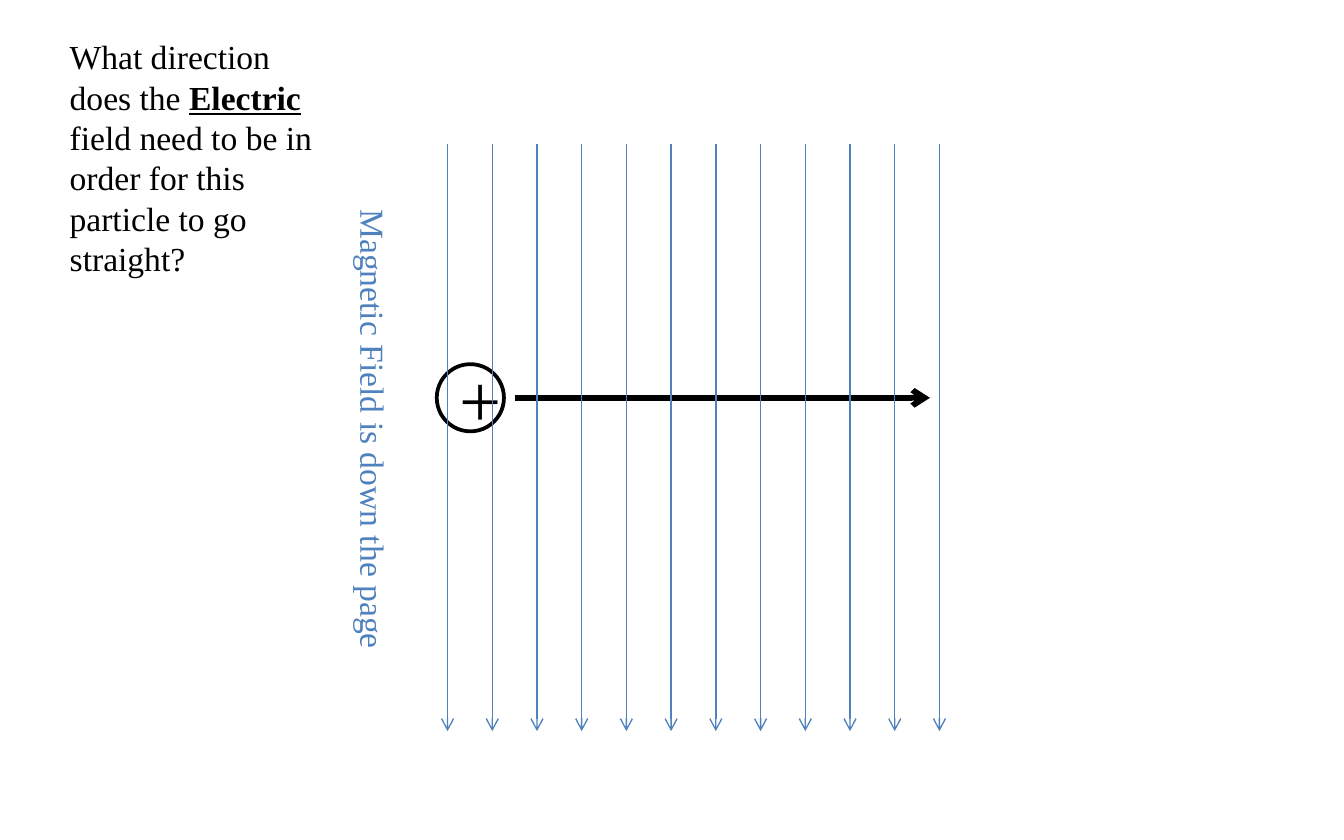
from lxml import etree
from pptx import Presentation
from pptx.dml.color import RGBColor
from pptx.enum.shapes import MSO_CONNECTOR, MSO_SHAPE
from pptx.enum.text import MSO_ANCHOR, MSO_AUTO_SIZE, PP_ALIGN
from pptx.oxml.ns import qn
from pptx.util import Inches, Pt

STRAIGHT = MSO_CONNECTOR.STRAIGHT
ELLIPSE = MSO_SHAPE.OVAL
MIDDLE = MSO_ANCHOR.MIDDLE
CENTER = PP_ALIGN.CENTER
FIT_SHAPE = MSO_AUTO_SIZE.SHAPE_TO_FIT_TEXT

FONT = "Times New Roman"
BLACK = RGBColor(0x00, 0x00, 0x00)
WHITE = RGBColor(0xFF, 0xFF, 0xFF)
FIELD_BLUE = RGBColor(0x4F, 0x81, 0xBD)

# (text, emphasised)
QUESTION = [
    ("What direction does the ", False),
    ("Electric", True),
    (" field need to be in order for this particle to go straight?", False),
]
FIELD_LABEL = "Magnetic Field is down the page"
CHARGE = "+"

FIELD_LINES = 12
FIELD_LEFT, FIELD_RIGHT = 3.33, 6.99
FIELD_TOP, FIELD_BOTTOM = 1.07, 5.44


def style_run(run, size, color):
    run.font.name = FONT
    run.font.size = Pt(size)
    run.font.color.rgb = color


def add_arrow(shapes, start, end, color, width):
    arrow = shapes.add_connector(STRAIGHT, *map(Inches, start + end))
    arrow.line.color.rgb = color
    arrow.line.width = Pt(width)
    line_xml = arrow.line._get_or_add_ln()
    etree.SubElement(line_xml, qn("a:tailEnd"), type="arrow")
    etree.SubElement(arrow._element.spPr, qn("a:effectLst"))


def add_text(shapes, box, parts, color, wrap):
    label = shapes.add_textbox(*map(Inches, box))
    frame = label.text_frame
    frame.word_wrap = wrap
    frame.auto_size = FIT_SHAPE
    for text, emphasised in parts:
        run = frame.paragraphs[0].add_run()
        run.text = text
        style_run(run, 18, color)
        run.font.bold = emphasised
        run.font.underline = emphasised
    return label


def add_particle(shapes):
    particle = shapes.add_shape(ELLIPSE, *map(Inches, (3.25, 2.71, 0.5, 0.5)))
    particle.shadow.inherit = False
    particle.fill.solid()
    particle.fill.fore_color.rgb = WHITE
    particle.line.color.rgb = BLACK
    particle.line.width = Pt(2)
    frame = particle.text_frame
    frame.text = CHARGE
    frame.vertical_anchor = MIDDLE
    sign = frame.paragraphs[0]
    sign.alignment = CENTER
    style_run(sign.runs[0], 40, BLACK)


def add_field(shapes):
    gap = (FIELD_RIGHT - FIELD_LEFT) / (FIELD_LINES - 1)
    for i in range(FIELD_LINES):
        x = FIELD_LEFT + i * gap
        add_arrow(shapes, (x, FIELD_TOP), (x, FIELD_BOTTOM), FIELD_BLUE, 0.75)
    label = add_text(shapes, (1.03, 3.01, 3.5, 0.4),
                     [(FIELD_LABEL, False)], FIELD_BLUE, wrap=False)
    label.rotation = 90


def main():
    prs = Presentation()
    prs.slide_width, prs.slide_height = Inches(10), Inches(6.25)
    slide = prs.slides.add_slide(prs.slide_layouts[6])

    motion = slide.shapes.add_group_shape().shapes
    add_particle(motion)
    add_arrow(motion, (3.83, 2.96), (6.92, 2.96), BLACK, 3)

    add_field(slide.shapes.add_group_shape().shapes)
    add_text(slide.shapes, (0.42, 0.22, 2.09, 1.92), QUESTION, BLACK, wrap=True)

    prs.save("out.pptx")


if __name__ == "__main__":
    main()
